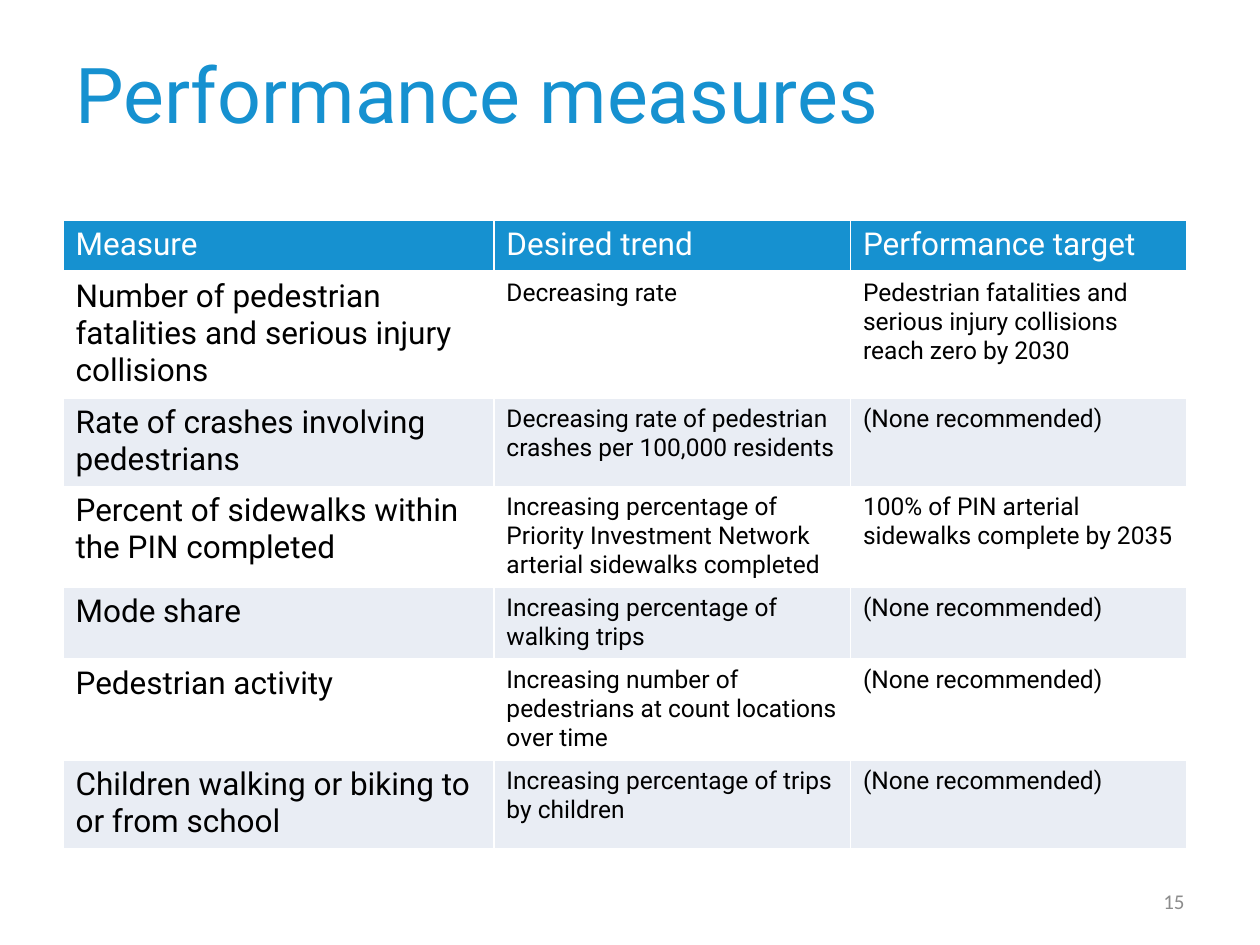
from lxml import etree
from pptx import Presentation
from pptx import util as u
from pptx.dml.color import RGBColor
from pptx.enum import text
from pptx.oxml import ns

BLUE, PALE, WHITE, BLACK, GRAY = "1691D0", "E9EDF4", "FFFFFF", "000000", "8C8C8C"


def color(value):
    return RGBColor.from_string(value)


def write(frame, words, size, shade, font="Roboto", align=text.PP_ALIGN.LEFT,
          anchor=text.MSO_ANCHOR.TOP):
    frame.word_wrap = True
    frame.vertical_anchor = anchor
    para = frame.paragraphs[0]
    para.alignment = align
    span = para.add_run()
    span.text = words
    span.font.name = font
    span.font.size = u.Pt(size)
    span.font.bold = False
    span.font.color.rgb = color(shade)


deck = Presentation()
deck.slide_width = u.Inches(10)
deck.slide_height = u.Inches(7.5)
page = deck.slides.add_slide(deck.slide_layouts[6])

title = page.shapes.add_textbox(u.Inches(0.5), u.Inches(0.3), u.Inches(9), u.Inches(0.87))
write(title.text_frame, "Performance measures", 44, BLUE, anchor=text.MSO_ANCHOR.MIDDLE)

none = "(None recommended)"
measures = [
    ("Measure", "Desired trend", "Performance target"),
    ("Number of pedestrian fatalities and serious injury collisions", "Decreasing rate",
     "Pedestrian fatalities and serious injury collisions reach zero by 2030"),
    ("Rate of crashes involving pedestrians",
     "Decreasing rate of pedestrian crashes per 100,000 residents", none),
    ("Percent of sidewalks within the PIN completed",
     "Increasing percentage of Priority Investment Network arterial sidewalks completed",
     "100% of PIN arterial sidewalks complete by 2035"),
    ("Mode share", "Increasing percentage of walking trips", none),
    ("Pedestrian activity",
     "Increasing number of pedestrians at count locations over time", none),
    ("Children walking or biking to or from school",
     "Increasing percentage of trips by children", none),
]
widths = [3.42, 2.83, 2.67]
heights = [0.41, 1, 0.7, 0.8, 0.57, 0.8, 0.7]

table = page.shapes.add_table(len(heights), len(widths), u.Inches(0.5), u.Inches(1.75),
                              u.Inches(sum(widths)), u.Inches(sum(heights))).table
for column, width in zip(table.columns, widths):
    column.width = u.Inches(width)
for row, height in zip(table.rows, heights):
    row.height = u.Inches(height)

for i, measure in enumerate(measures):
    for j, words in enumerate(measure):
        cell = table.cell(i, j)
        header = i == 0
        write(cell.text_frame, words, 18 if header or j == 0 else 14,
              WHITE if header else BLACK)
        if i % 2 and not header:
            cell.fill.background()
        else:
            cell.fill.solid()
            cell.fill.fore_color.rgb = color(BLUE if header else PALE)
        properties = cell._tc.get_or_add_tcPr()
        for place, side in enumerate(("lnL", "lnR", "lnT", "lnB")):
            points = 3 if (i, side) in ((0, "lnB"), (1, "lnT")) else 1
            line = etree.Element(ns.qn(f"a:{side}"), w=str(u.Pt(points)))
            solid = etree.SubElement(line, ns.qn("a:solidFill"))
            etree.SubElement(solid, ns.qn("a:srgbClr"), val=WHITE)
            properties.insert(place, line)

number = page.shapes.add_textbox(u.Inches(7.17), u.Inches(6.95), u.Inches(2.33), u.Inches(0.4))
write(number.text_frame, "15", 12, GRAY, font="Calibri", align=text.PP_ALIGN.RIGHT,
      anchor=text.MSO_ANCHOR.MIDDLE)

deck.save("out.pptx")
